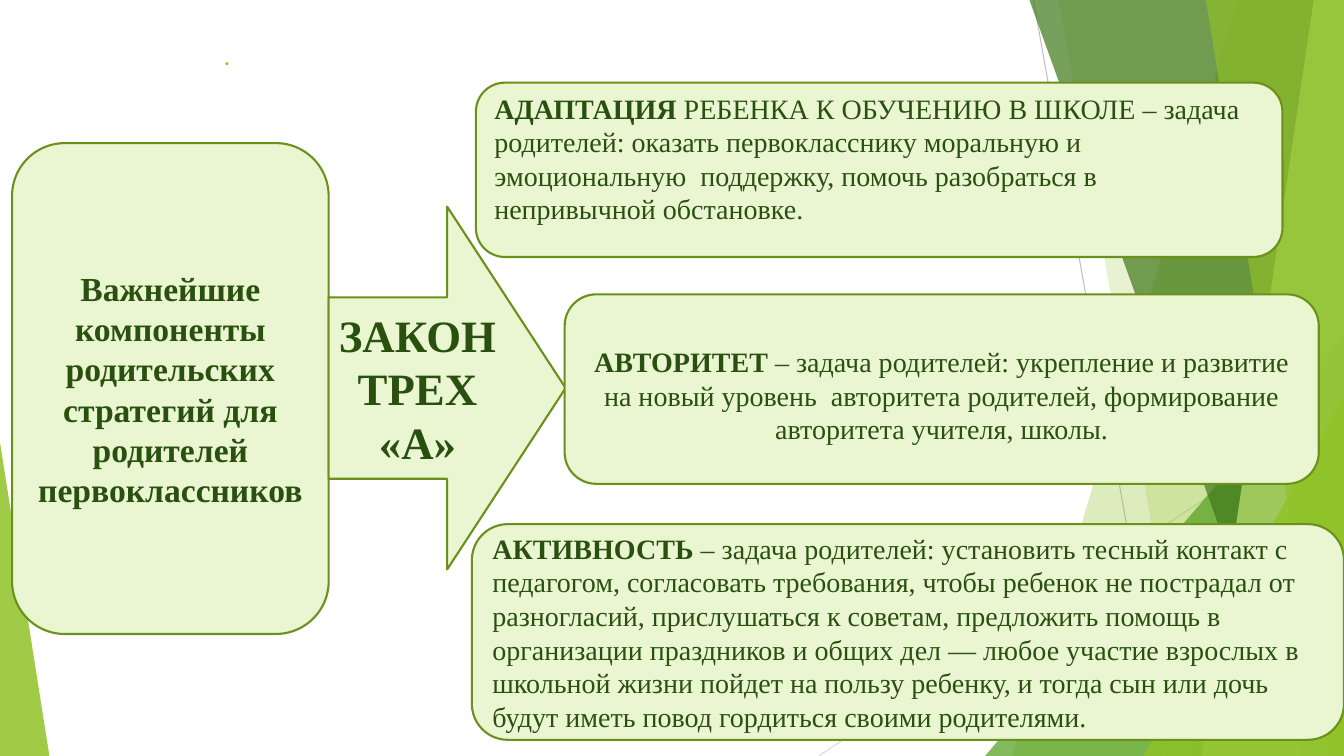
from dataclasses import dataclass

from lxml import etree
from pptx import Presentation
from pptx.dml.color import RGBColor
from pptx.enum import shapes, text
from pptx.oxml.ns import qn
from pptx.util import Inches, Pt


@dataclass(frozen=True)
class Theme:
    green: str = "90C226"
    mid_green: str = "54A021"
    deep_green: str = "3F7819"
    pale_green: str = "C0E474"
    box_fill: str = "EAF6D1"
    box_line: str = "6B901C"
    ink: str = "2A5010"
    ray: str = "BFBFBF"
    light_ray: str = "D9D9D9"
    body_font: str = "Times New Roman"
    title_font: str = "Karla"
    title_size: int = 14
    body_size: int = 20
    topic_size: int = 24
    law_size: int = 32


THEME = Theme()
WIDTH, HEIGHT = 13.33, 7.5
SHAPE = shapes.MSO_SHAPE
ALIGN = text.PP_ALIGN
ANCHOR = text.MSO_ANCHOR


def rgb(value):
    return RGBColor.from_string(value)


def format_run(run, font, size, color, bold):
    run.font.name = font
    run.font.size = Pt(size)
    run.font.color.rgb = rgb(color)
    run.font.bold = bold


def add_title(slide, wording):
    title = slide.shapes.title
    title.left, title.top = Inches(2.13), Inches(0.41)
    title.width, title.height = Inches(11.2), Inches(0.83)
    frame = title.text_frame
    frame.text = wording
    frame.vertical_anchor = ANCHOR.TOP
    paragraph = frame.paragraphs[0]
    paragraph.alignment = ALIGN.LEFT
    format_run(paragraph.runs[0], THEME.title_font, THEME.title_size, THEME.green, True)


def add_ray(slide, start, end, color):
    points = [Inches(value) for value in (*start, *end)]
    ray = slide.shapes.add_connector(shapes.MSO_CONNECTOR.STRAIGHT, *points)
    ray.line.color.rgb = rgb(color)
    ray.line.width = Pt(0.75)
    etree.SubElement(ray._element.spPr, qn("a:effectLst"))


def tint(facet, color, opacity):
    """Fill a decorative facet with a see-through colour and no outline."""
    facet.shadow.inherit = False
    facet.fill.solid()
    facet.fill.fore_color.rgb = rgb(color)
    facet.line.fill.background()
    color_node = facet._element.spPr.find(qn("a:solidFill"))[0]
    etree.SubElement(color_node, qn("a:alpha"), val=str(opacity * 1000))


def add_facet(slide, top_x, bottom_x, color, opacity):
    """Add a facet that runs from a slanted left side to the right slide edge."""
    outline = [(WIDTH, 0), (WIDTH, HEIGHT), (bottom_x, HEIGHT)]
    builder = slide.shapes.build_freeform(Inches(top_x), 0)
    builder.add_line_segments([(Inches(x), Inches(y)) for x, y in outline])
    tint(builder.convert_to_shape(), color, opacity)


def add_corner(slide, left, top, right, apex, color, opacity):
    """Add a right triangle that stands on the bottom slide edge."""
    corner = slide.shapes.add_shape(
        SHAPE.ISOSCELES_TRIANGLE, Inches(left), Inches(top),
        Inches(right - left), Inches(HEIGHT - top))
    corner.adjustments[0] = apex
    tint(corner, color, opacity)


def add_backdrop(slide):
    add_ray(slide, (10.25, 0), (11.58, HEIGHT), THEME.ray)
    add_ray(slide, (WIDTH, 4.03), (8.12, HEIGHT), THEME.light_ray)
    add_facet(slide, 12.28, 10.04, THEME.green, 30)
    add_facet(slide, 10.5, 11.83, THEME.green, 20)
    add_corner(slide, 9.77, 3.33, WIDTH, 1, THEME.mid_green, 72)
    add_facet(slide, 10.21, 12.91, THEME.deep_green, 70)
    add_facet(slide, 13.03, 11.92, THEME.pale_green, 70)
    add_facet(slide, 11.96, 13.18, THEME.green, 65)
    add_corner(slide, 11.34, 3.93, WIDTH, 1, THEME.green, 80)
    add_corner(slide, 0, 4.39, 0.49, 0, THEME.green, 85)


def add_panel(slide, preset, place, size, heading, body="",
              align=ALIGN.CENTER, anchor=ANCHOR.MIDDLE, margin_top=0.05):
    """Add an outlined panel with a bold heading that runs on into plain body text."""
    panel = slide.shapes.add_shape(preset, *(Inches(value) for value in place))
    panel.shadow.inherit = False
    panel.fill.solid()
    panel.fill.fore_color.rgb = rgb(THEME.box_fill)
    panel.line.color.rgb = rgb(THEME.box_line)
    panel.line.width = Pt(1.5)

    frame = panel.text_frame
    frame.word_wrap = True
    frame.vertical_anchor = anchor
    frame.margin_top = Inches(margin_top)
    paragraph = frame.paragraphs[0]
    paragraph.alignment = align
    for wording, bold in ((heading, True), (body, False)):
        if wording:
            run = paragraph.add_run()
            run.text = wording
            format_run(run, THEME.body_font, size, THEME.ink, bold)


def main():
    prs = Presentation()
    prs.slide_width, prs.slide_height = Inches(WIDTH), Inches(HEIGHT)
    slide = prs.slides.add_slide(prs.slide_layouts[5])

    add_backdrop(slide)
    add_title(slide, ".")
    add_panel(
        slide, SHAPE.ROUNDED_RECTANGLE, (0.12, 1.42, 3.14, 4.87), THEME.topic_size,
        "Важнейшие компоненты родительских стратегий для родителей первоклассников")
    add_panel(slide, SHAPE.RIGHT_ARROW, (3.26, 2.05, 2.35, 3.6), THEME.law_size,
              "ЗАКОН ТРЕХ «А»")
    add_panel(
        slide, SHAPE.ROUNDED_RECTANGLE, (5.6, 2.92, 7.48, 1.88), THEME.body_size,
        "АВТОРИТЕТ",
        " – задача родителей: укрепление и развитие на новый уровень  авторитета "
        "родителей, формирование авторитета учителя, школы.",
        margin_top=0.17)
    add_panel(
        slide, SHAPE.ROUNDED_RECTANGLE, (4.68, 5.2, 8.65, 2.14), THEME.body_size,
        "АКТИВНОСТЬ",
        " – задача родителей: установить тесный контакт с педагогом, согласовать "
        "требования, чтобы ребенок не пострадал от разногласий, прислушаться к советам, "
        "предложить помощь в организации праздников и общих дел — любое участие "
        "взрослых в школьной жизни пойдет на пользу ребенку, и тогда сын или дочь "
        "будут иметь повод гордиться своими родителями.",
        align=ALIGN.LEFT)
    add_panel(
        slide, SHAPE.ROUNDED_RECTANGLE, (4.72, 0.82, 8, 1.73), THEME.body_size,
        "АДАПТАЦИЯ",
        " РЕБЕНКА К ОБУЧЕНИЮ В ШКОЛЕ – задача родителей: оказать первокласснику "
        "моральную и эмоциональную  поддержку, помочь разобраться в непривычной "
        "обстановке.",
        align=ALIGN.LEFT, anchor=ANCHOR.TOP, margin_top=0)

    prs.save("out.pptx")


if __name__ == "__main__":
    main()
